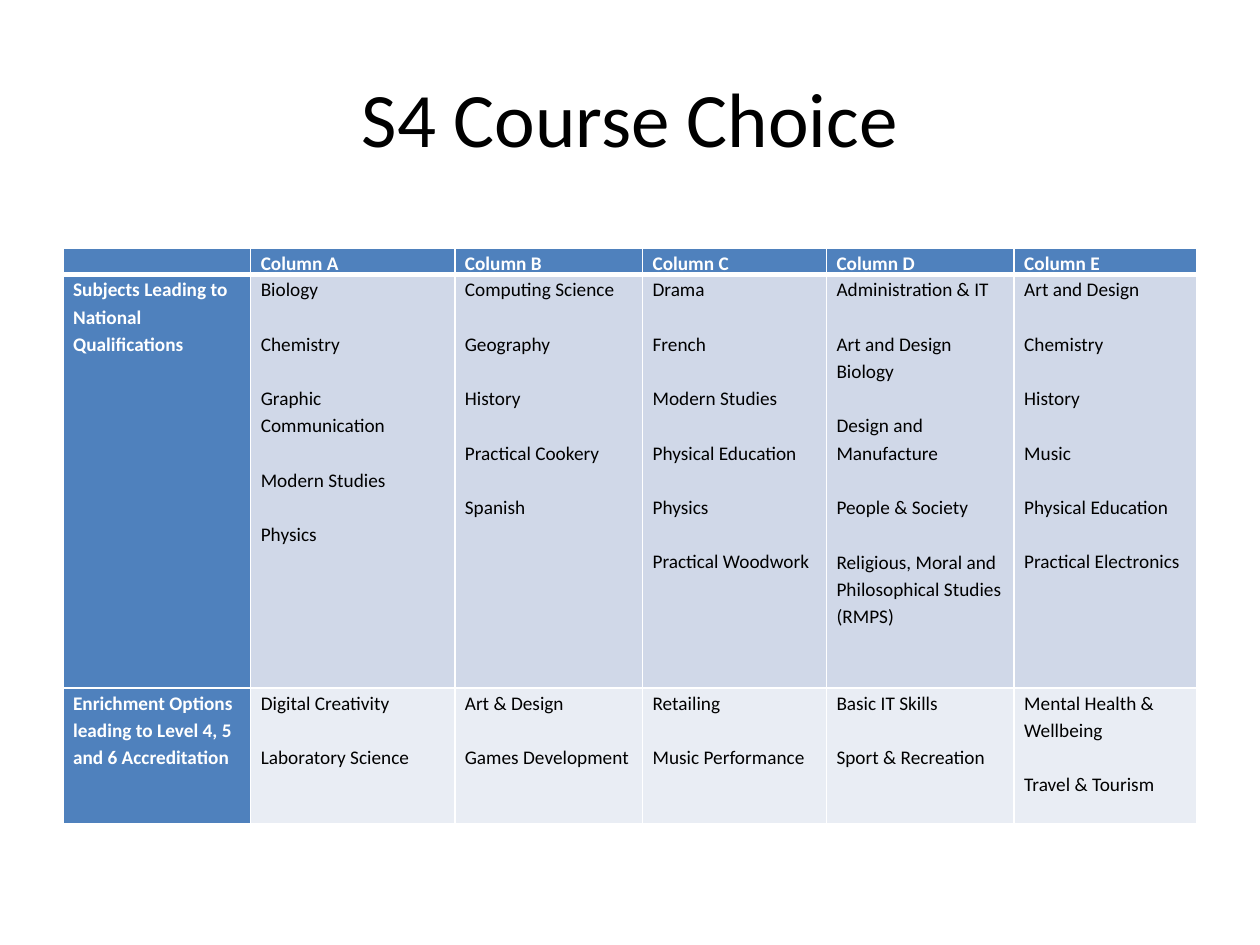
from lxml.etree import SubElement
from pptx import Presentation
from pptx.dml.color import RGBColor
from pptx.enum.text import MSO_ANCHOR as Anchor, PP_ALIGN as Align
from pptx.oxml import parse_xml
from pptx.oxml.ns import nsdecls, qn
from pptx.util import Inches, Pt

BLUE, WHITE, BLACK = "4F81BD", "FFFFFF", "000000"
COLUMN_WIDTHS = [1.49, 1.62, 1.49, 1.46, 1.49, 1.45]
ROW_HEIGHTS = [0.2, 3.28, 1.08]
BODY_FILLS = [BLUE, "D0D8E8", "E9EDF4"]

HEADINGS = [[]] + [[f"Column {letter}"] for letter in "ABCDE"]
QUALIFICATIONS = [
    ["Subjects Leading to National Qualifications"],
    ["Biology", "Chemistry", "Graphic Communication", "Modern Studies", "Physics"],
    ["Computing Science", "Geography", "History", "Practical Cookery", "Spanish"],
    ["Drama", "French", "Modern Studies", "Physical Education", "Physics",
     "Practical Woodwork"],
    ["Administration & IT", "Art and Design\nBiology", "Design and Manufacture",
     "People & Society", "Religious, Moral and Philosophical Studies (RMPS)"],
    ["Art and Design", "Chemistry", "History", "Music", "Physical Education",
     "Practical Electronics"],
]
ENRICHMENT = [
    ["Enrichment Options leading to Level 4, 5 and 6 Accreditation"],
    ["Digital Creativity", "Laboratory Science"],
    ["Art & Design", "Games Development"],
    ["Retailing", "Music Performance"],
    ["Basic IT Skills", "Sport & Recreation"],
    ["Mental Health & Wellbeing", "Travel & Tourism"],
]


def color(value):
    return RGBColor.from_string(value)


class SlideBuilder:
    """Holds the style and current page, and draws each kind of element."""

    font = "Calibri"
    text_size = 11
    line_spacing = 1.15
    subject_gap = 15.5

    def __init__(self, page):
        self.page = page

    def style(self, para, size, ink, bold=False):
        for span in para.runs:
            span.font.name = self.font
            span.font.size = Pt(size)
            span.font.bold = bold
            span.font.color.rgb = color(ink)

    def title(self, text, left, top, width, height):
        box = self.page.shapes.add_textbox(
            Inches(left), Inches(top), Inches(width), Inches(height))
        frame = box.text_frame
        frame.word_wrap = True
        frame.vertical_anchor = Anchor.MIDDLE
        frame.text = text
        para = frame.paragraphs[0]
        para.alignment = Align.CENTER
        self.style(para, 44, BLACK)

    def borders(self, cell, widths):
        properties = cell._tc.get_or_add_tcPr()
        for index, (side, width) in enumerate(widths.items()):
            properties.insert(index, parse_xml(
                f'<a:ln{side} {nsdecls("a")} w="{Pt(width)}"><a:solidFill>'
                f'<a:srgbClr val="{WHITE}"/></a:solidFill></a:ln{side}>'))

    def cell(self, cell, subjects, fill):
        heading = fill == BLUE
        cell.margin_left = cell.margin_right = Inches(0.08)
        cell.margin_top = cell.margin_bottom = 0
        frame = cell.text_frame
        frame.text = "\n".join(subjects)
        starts, position = set(), 0
        for subject in subjects:
            starts.add(position)
            position += len(subject.split("\n"))
        for index, para in enumerate(frame.paragraphs):
            para.line_spacing = self.line_spacing
            if index and index in starts:
                para.space_before = Pt(self.subject_gap)
            self.style(para, self.text_size, WHITE if heading else BLACK, heading)
            if not para.runs:
                SubElement(para._p, qn("a:endParaRPr"), sz=str(self.text_size * 100))
        cell.fill.solid()
        cell.fill.fore_color.rgb = color(fill)

    def table(self, rows, left, top):
        table = self.page.shapes.add_table(
            len(rows), len(COLUMN_WIDTHS), Inches(left), Inches(top),
            Inches(sum(COLUMN_WIDTHS)), Inches(sum(ROW_HEIGHTS))).table
        for column, width in zip(table.columns, COLUMN_WIDTHS):
            column.width = Inches(width)
        for row, height in zip(table.rows, ROW_HEIGHTS):
            row.height = Inches(height)
        for r, row in enumerate(rows):
            for c, subjects in enumerate(row):
                cell = table.cell(r, c)
                self.cell(cell, subjects, BODY_FILLS[r] if c else BLUE)
                self.borders(cell, {"L": 1, "R": 1, "T": 3 if r == 1 else 1,
                                    "B": 3 if r == 0 else 1})


def main():
    deck = Presentation()
    deck.slide_width, deck.slide_height = Inches(10), Inches(7.5)
    builder = SlideBuilder(deck.slides.add_slide(deck.slide_layouts[6]))
    builder.title("S4 Course Choice", 0.5, 0.3, 9, 1.25)
    builder.table([HEADINGS, QUALIFICATIONS, ENRICHMENT], 0.5, 1.97)
    deck.save("out.pptx")


if __name__ == "__main__":
    main()
